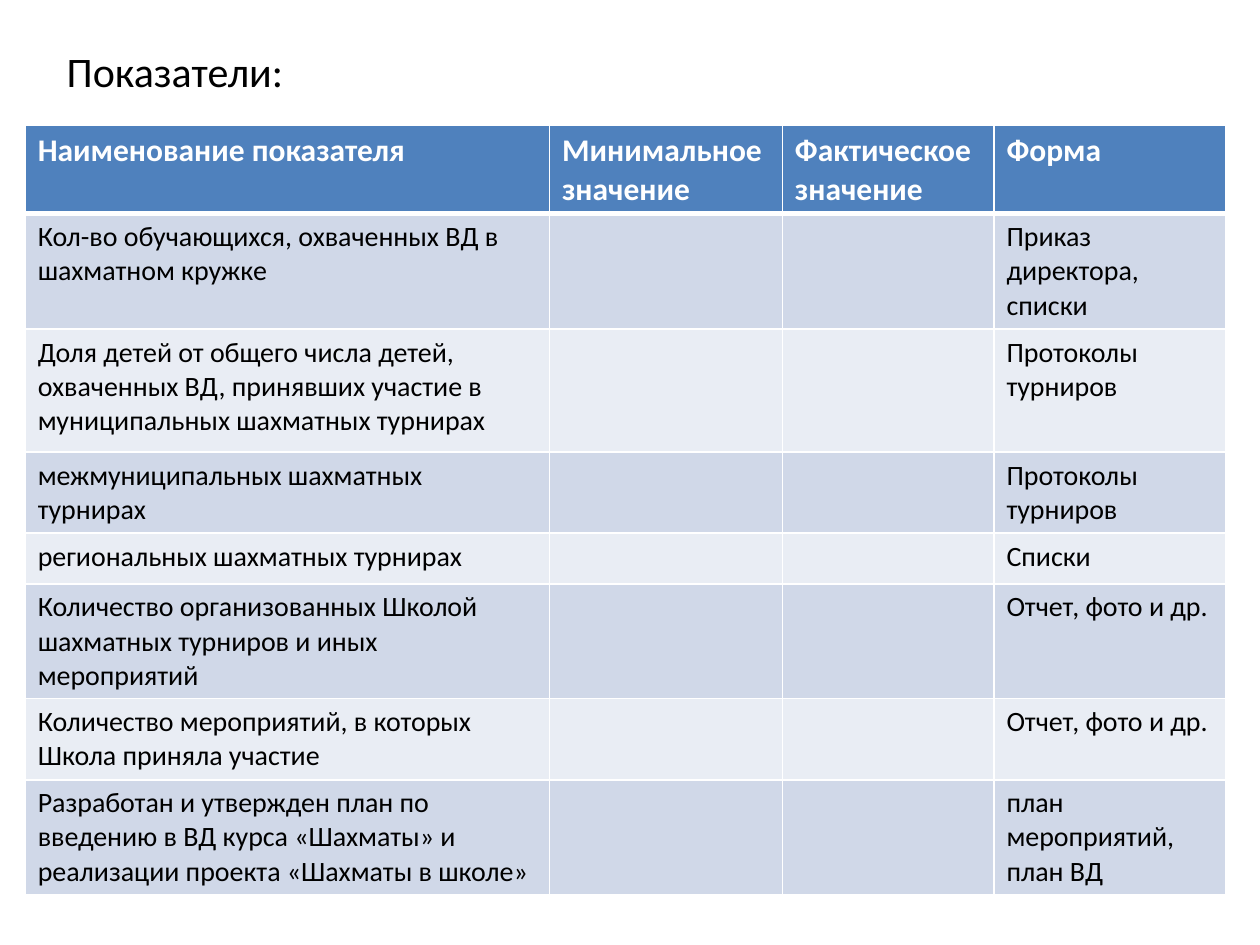
"""Builds a slide with a table of chess programme indicators."""
import pptx
import pptx.dml.color
import pptx.enum.text
import pptx.oxml.ns
import pptx.util
from dataclasses import dataclass
from lxml import etree

Pt = pptx.util.Pt


@dataclass(frozen=True)
class Theme:
    font: str = "Calibri"
    black: str = "000000"
    white: str = "FFFFFF"
    head: str = "4F81BD"
    bands: tuple = ("E9EDF4", "D0D8E8")
    title: int = 24
    label: int = 18
    body: int = 16


theme = Theme()


def write(frame, text, size, color, bold=False):
    frame.text = text
    for para in frame.paragraphs:
        look = {"name": theme.font, "size": Pt(size), "bold": bold}
        for key, value in look.items():
            setattr(para.font, key, value)
        para.font.color.rgb = pptx.dml.color.RGBColor.from_string(color)


def border(cell, side, width):
    props = cell._tc.get_or_add_tcPr()
    line = etree.SubElement(props, pptx.oxml.ns.qn("a:" + side), w=str(Pt(width)))
    solid = etree.SubElement(line, pptx.oxml.ns.qn("a:solidFill"))
    etree.SubElement(solid, pptx.oxml.ns.qn("a:srgbClr"), val=theme.white)


deck = pptx.Presentation()
deck.slide_width, deck.slide_height = Pt(720), Pt(540)
slide = deck.slides.add_slide(deck.slide_layouts[6])

title = slide.shapes.add_textbox(Pt(31), Pt(31.7), Pt(636), Pt(17.3)).text_frame
title.word_wrap = True
title.vertical_anchor = pptx.enum.text.MSO_ANCHOR.MIDDLE
write(title, "Показатели:", theme.title, theme.black)

rows = [
    (50.3, "Наименование показателя", "Минимальное значение", "Фактическое значение", "Форма"),
    (66, "Кол-во обучающихся, охваченных ВД в шахматном кружке", "", "",
     "Приказ директора, списки"),
    (70.3, "Доля детей от общего числа детей, охваченных ВД, принявших участие в "
     "муниципальных шахматных турнирах", "", "", "Протоколы турниров"),
    (46.3, "межмуниципальных шахматных турнирах", "", "", "Протоколы турниров"),
    (29, "региональных шахматных турнирах", "", "", "Списки"),
    (65.7, "Количество организованных Школой шахматных турниров и иных мероприятий", "", "",
     "Отчет, фото и др."),
    (46.3, "Количество мероприятий, в которых Школа приняла участие", "", "",
     "Отчет, фото и др."),
    (65.7, "Разработан и утвержден план по введению в ВД курса «Шахматы» и реализации "
     "проекта «Шахматы в школе»", "", "", "план мероприятий,\nплан ВД"),
]
widths = [299.6, 133.1, 120.9, 132.5]
high = sum(row[0] for row in rows)
table = slide.shapes.add_table(
    len(rows), len(widths), Pt(14.4), Pt(71.6), Pt(sum(widths)), Pt(high)).table
for col, width in zip(table.columns, widths):
    col.width = Pt(width)

for r, (height, *texts) in enumerate(rows):
    table.rows[r].height = Pt(height)
    top = r == 0
    size, ink = (theme.label, theme.white) if top else (theme.body, theme.black)
    shade = theme.head if top else theme.bands[r % 2]
    for c, text in enumerate(texts):
        cell = table.cell(r, c)
        write(cell.text_frame, text, size, ink, top)
        edges = {"lnL": 1, "lnR": 1, "lnT": 3 if r == 1 else 1, "lnB": 3 if top else 1}
        for side, width in edges.items():
            border(cell, side, width)
        cell.fill.solid()
        cell.fill.fore_color.rgb = pptx.dml.color.RGBColor.from_string(shade)

deck.save("out.pptx")
